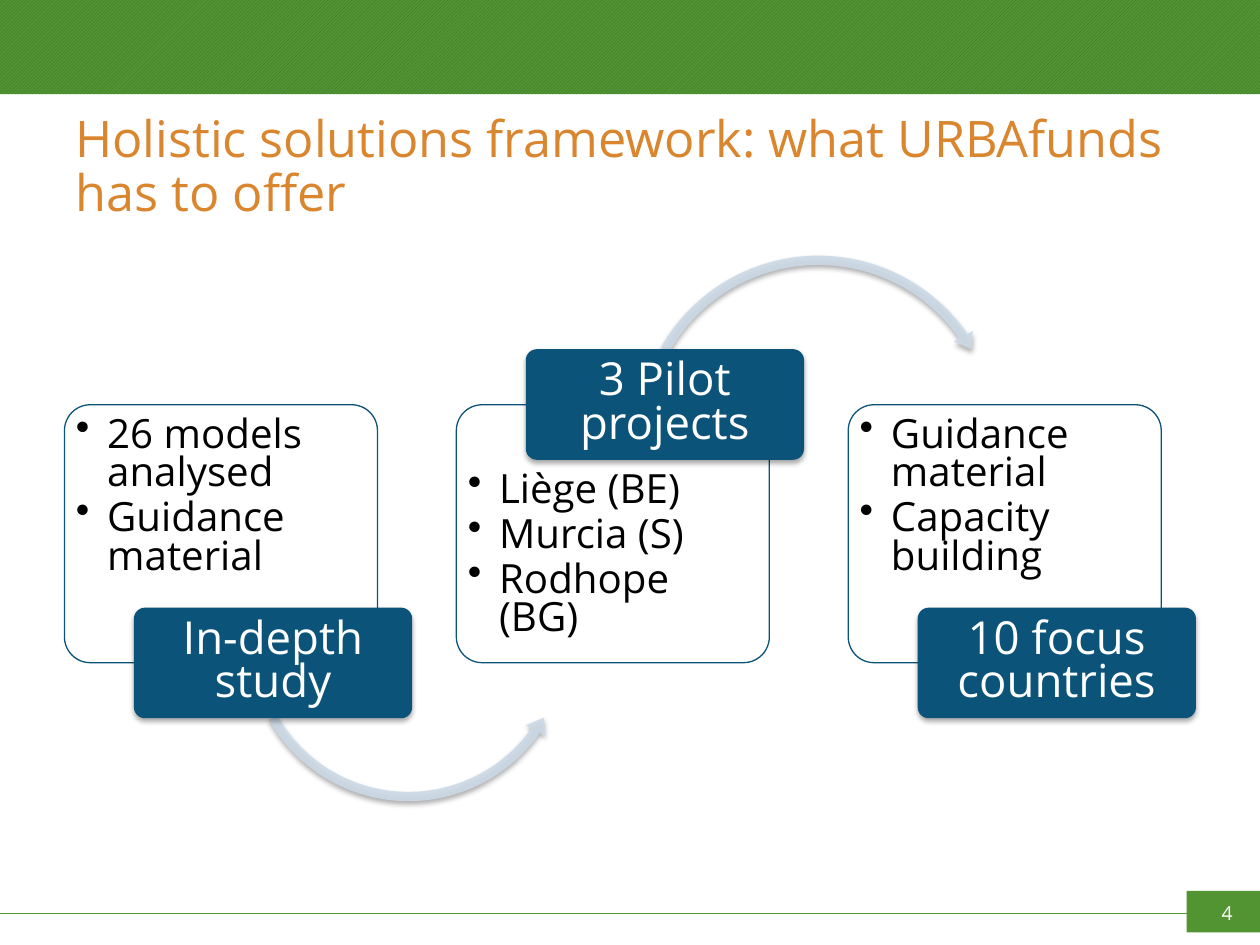
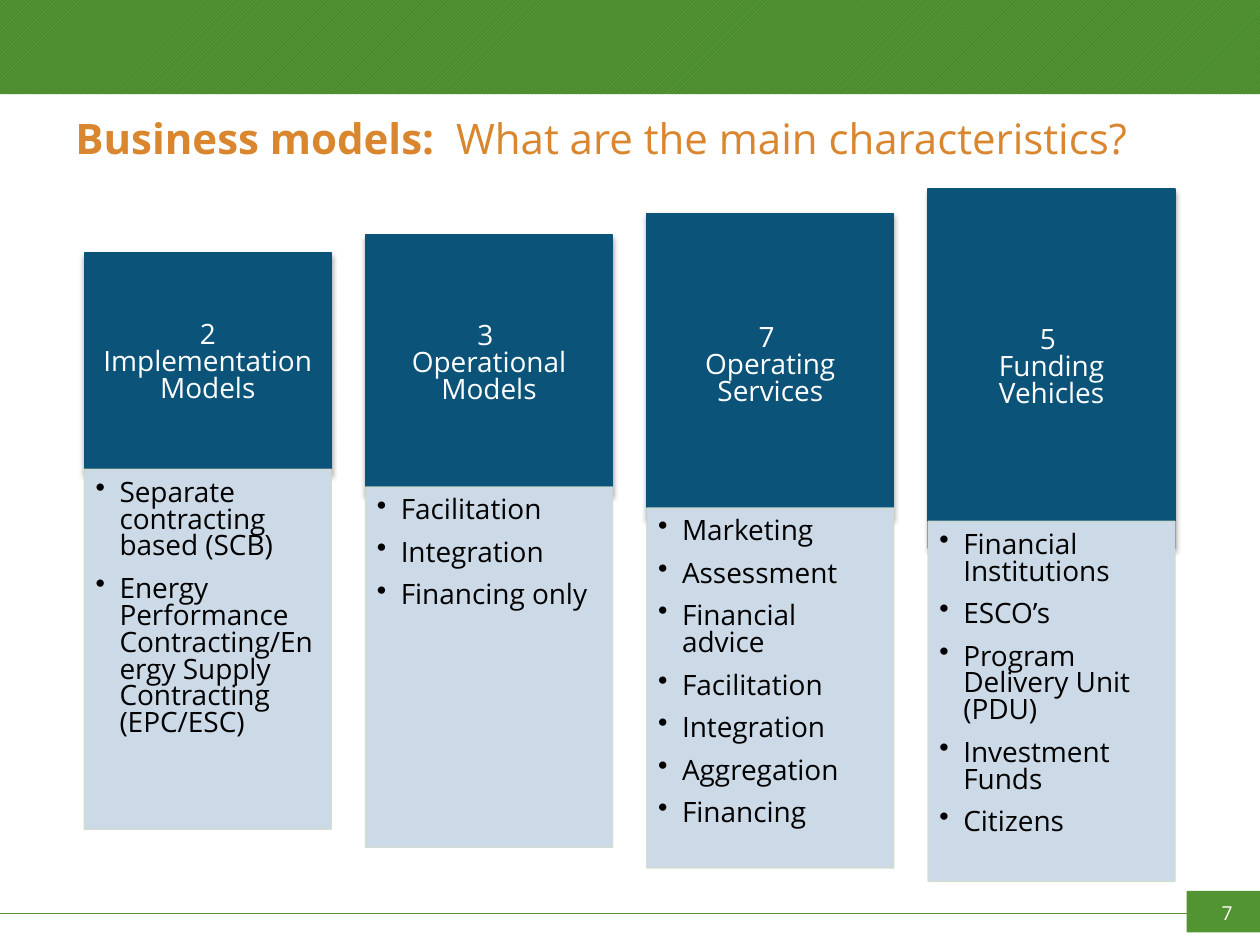
"""Build two slides on a city investment framework."""
from lxml import etree
from pptx import Presentation
from pptx.dml.color import RGBColor
from pptx.enum.dml import MSO_PATTERN
from pptx.enum.shapes import MSO_CONNECTOR, MSO_SHAPE as SHAPE
from pptx.enum.text import MSO_ANCHOR as ANCHOR, PP_ALIGN as ALIGN
from pptx.oxml.ns import qn
from pptx.util import Cm, Pt

FONT = "Open Sans"
COLORS = {
    "green": "539432", "dark_green": "35702E", "orange": "D9862F",
    "blue": "0B5379", "pale_blue": "CCDAE7", "edge": "D1DCCE",
    "white": "FFFFFF", "black": "000000",
}
WIDTH, HEIGHT = 25.4, 19.05

CARD_LEFT, CARD_STEP, CARD_TOP = 1.3, 7.9, 8.16
TAG_LOW, TAG_HIGH = 12.25, 7.04
CARDS = [
    ("In-depth study", ["26 models analysed", "Guidance material"], TAG_LOW, 0.1),
    ("3 Pilot projects", ["Liège (BE)", "Murcia (S)", "Rodhope (BG)"], TAG_HIGH, 1.22),
    ("10 focus countries", ["Guidance material", "Capacity building"], TAG_LOW, 0.1),
]
ARROWS = [
    (SHAPE.LEFT_CIRCULAR_ARROW, 4.87, 9.55, 6.73,
     (0.028, 3.433, 21.188, 90.245, 0.033)),
    (SHAPE.CIRCULAR_ARROW, 12.73, 5.03, 7.54,
     (0.025, 3.044, 195.201, 125.755, 0.029)),
]

COLUMN_LEFT, COLUMN_STEP, COLUMN_WIDTH, BODY_HEIGHT = 1.7, 5.67, 4.98, 7.26
COLUMNS = [
    ("2 Implementation Models", 5.1, 4.45, 9.46,
     ["Separate contracting based (SCB)",
      "Energy Performance Contracting/Energy Supply Contracting (EPC/ESC)"]),
    ("3 \vOperational Models", 4.74, 5.23, 9.82,
     ["Facilitation", "Integration", "Financing only"]),
    ("7 \vOperating Services", 4.31, 6.15, 10.24,
     ["Marketing", "Assessment", "Financial advice", "Facilitation",
      "Integration", "Aggregation", "Financing"]),
    ("5 \vFunding Vehicles", 3.81, 7.24, 10.51,
     ["Financial Institutions", "ESCO’s", "Program Delivery Unit (PDU)",
      "Investment Funds", "Citizens"]),
]


def rgb(name):
    """Return the named colour."""
    return RGBColor.from_string(COLORS[name])


def set_alpha(fill_holder, percent):
    """Make the solid colour inside an element partly transparent."""
    color = next(fill_holder.iter(qn("a:srgbClr")))
    etree.SubElement(color, qn("a:alpha"), val=str(percent * 1000))


def add_shadow(shape):
    """Give a shape a soft shadow straight below it."""
    effects = shape.element.spPr.find(qn("a:effectLst"))
    shadow = etree.SubElement(
        effects, qn("a:outerShdw"), blurRad=str(Pt(3.1)), dist=str(Pt(1.8)),
        dir="5400000", algn="ctr", rotWithShape="0")
    color = etree.SubElement(shadow, qn("a:srgbClr"), val=COLORS["black"])
    etree.SubElement(color, qn("a:alpha"), val="35000")


def add_block(page, kind, left, top, width, height, fill, line=None,
              shadow=False, adjustments=()):
    """Add a preset shape with a plain fill."""
    shape = page.shapes.add_shape(kind, Cm(left), Cm(top), Cm(width), Cm(height))
    shape.shadow.inherit = False
    shape.fill.solid()
    shape.fill.fore_color.rgb = rgb(fill)
    if line:
        shape.line.color.rgb = rgb(line)
        shape.line.width = Pt(0.75)
    else:
        shape.line.fill.background()
    if shadow:
        add_shadow(shape)
    for index, value in enumerate(adjustments):
        shape.adjustments[index] = value
    return shape


def set_frame(shape, anchor, left, top, right, bottom):
    """Set wrapping, anchor and insets, and return the text frame."""
    frame = shape.text_frame
    frame.word_wrap = True
    frame.vertical_anchor = anchor
    frame.margin_left, frame.margin_top = Cm(left), Cm(top)
    frame.margin_right, frame.margin_bottom = Cm(right), Cm(bottom)
    return frame


def write(para, text, size=16, color="black", bold=False, align=ALIGN.LEFT,
          spacing=0.8, after=0):
    """Write text into a paragraph, keeping line breaks."""
    para.alignment = align
    para.line_spacing = spacing
    para.space_after = Pt(after)
    for index, part in enumerate(text.split("\v")):
        if index:
            para.add_line_break()
        span = para.add_run()
        span.text = part
        span.font.name = FONT
        span.font.size = Pt(size)
        span.font.bold = bold
        span.font.color.rgb = rgb(color)


def write_bullets(frame, items, indent, **format_options):
    """Write one bulleted paragraph for each item."""
    for index, item in enumerate(items):
        para = frame.add_paragraph() if index else frame.paragraphs[0]
        props = para._p.get_or_add_pPr()
        props.set("marL", str(Cm(indent)))
        props.set("indent", str(-Cm(indent)))
        etree.SubElement(props, qn("a:buChar"), char="•")
        write(para, item, **format_options)


def add_title(page, top, height, parts, size):
    """Add the orange title made of (text, bold) parts."""
    box = page.shapes.add_textbox(Cm(1.27), Cm(top), Cm(22.86), Cm(height))
    frame = set_frame(box, ANCHOR.MIDDLE, 0.25, 0.13, 0.25, 0.13)
    for text, bold in parts:
        write(frame.paragraphs[0], text, size=size, color="orange",
              bold=bold, spacing=0.9)


def add_page(deck, number):
    """Add a page with the hatched band, footer rule and page number."""
    page = deck.slides.add_slide(deck.slide_layouts[6])
    band = add_block(page, SHAPE.RECTANGLE, 0, 0, WIDTH, 1.9, "green")
    band.fill.patterned()
    band.fill.pattern = MSO_PATTERN.LIGHT_UPWARD_DIAGONAL
    band.fill.fore_color.rgb = rgb("dark_green")
    band.fill.back_color.rgb = rgb("green")

    rule = page.shapes.add_connector(
        MSO_CONNECTOR.STRAIGHT, Cm(WIDTH), Cm(18.42), Cm(0), Cm(18.42))
    rule.line.color.rgb = rgb("green")
    rule.line.width = Pt(0.75)
    etree.SubElement(rule.element.spPr, qn("a:effectLst"))

    add_block(page, SHAPE.RECTANGLE, 23.92, 17.96, 1.48, 0.84, "green")
    box = page.shapes.add_textbox(Cm(24), Cm(18.03), Cm(1.48), Cm(0.81))
    frame = set_frame(box, ANCHOR.TOP, 0.25, 0.13, 0.25, 0.13)
    write(frame.paragraphs[0], str(number), size=11, color="white",
          align=ALIGN.CENTER, spacing=1.0)
    return page


def add_card(page, left, items, text_top):
    """Add an outlined rounded card with a bulleted list."""
    card = add_block(page, SHAPE.ROUNDED_RECTANGLE, left, CARD_TOP, 6.31, 5.2,
                     "white", line="blue", adjustments=(0.1,))
    frame = set_frame(card, ANCHOR.TOP, 0.08, text_top, 0.08, 0)
    write_bullets(frame, items, 0.63, size=23, after=3.5)


def add_tag(page, left, top, text):
    """Add the blue label that overlaps a card."""
    tag = add_block(page, SHAPE.ROUNDED_RECTANGLE, left, top, 5.61, 2.23,
                    "blue", shadow=True, adjustments=(0.1,))
    frame = set_frame(tag, ANCHOR.MIDDLE, 0.13, 0.1, 0.13, 0.1)
    write(frame.paragraphs[0], text, size=26, color="white", align=ALIGN.CENTER)


def add_curved_arrow(page, kind, left, top, size, adjustments):
    """Add a pale curved arrow leading to the next card."""
    arrow = add_block(page, kind, left, top, size, size, "pale_blue",
                      shadow=True, adjustments=adjustments)
    set_alpha(arrow.element.spPr.find(qn("a:solidFill")), 90)


def add_column(page, left, heading, head_top, head_height, body_top, items):
    """Add a blue heading block with a pale list block below it."""
    head = add_block(page, SHAPE.RECTANGLE, left, head_top, COLUMN_WIDTH,
                     head_height, "blue", line="blue", shadow=True)
    frame = set_frame(head, ANCHOR.MIDDLE, 0.3, 0.18, 0.3, 0.18)
    write(frame.paragraphs[0], heading, color="white", align=ALIGN.CENTER)

    body = add_block(page, SHAPE.RECTANGLE, left, body_top, COLUMN_WIDTH,
                     BODY_HEIGHT, "pale_blue", line="edge")
    set_alpha(body.element.spPr.find(qn("a:ln")), 90)
    frame = set_frame(body, ANCHOR.TOP, 0.23, 0.23, 0.3, 0.36)
    write_bullets(frame, items, 0.48, after=8.9)


def build_framework(deck):
    """Build the page with the three linked cards."""
    page = add_page(deck, 4)
    title = "Holistic solutions framework: what URBAfunds has to offer"
    add_title(page, 2.34, 2.1, [(title, False)], 28.8)
    for index, (label, items, tag_top, text_top) in enumerate(CARDS):
        left = CARD_LEFT + index * CARD_STEP
        add_card(page, left, items, text_top)
        if index < len(ARROWS):
            add_curved_arrow(page, *ARROWS[index])
        add_tag(page, left + 1.4, tag_top, label)


def build_models(deck):
    """Build the page with the four columns of characteristics."""
    page = add_page(deck, 7)
    parts = [("Business models: ", True),
             (" What are the main characteristics?", False)]
    add_title(page, 1.9, 1.9, parts, 24)
    for index, column in enumerate(COLUMNS):
        add_column(page, COLUMN_LEFT + index * COLUMN_STEP, *column)


def main():
    """Build and save the deck."""
    deck = Presentation()
    deck.slide_width, deck.slide_height = Cm(WIDTH), Cm(HEIGHT)
    build_framework(deck)
    build_models(deck)
    deck.save("out.pptx")


if __name__ == "__main__":
    main()
